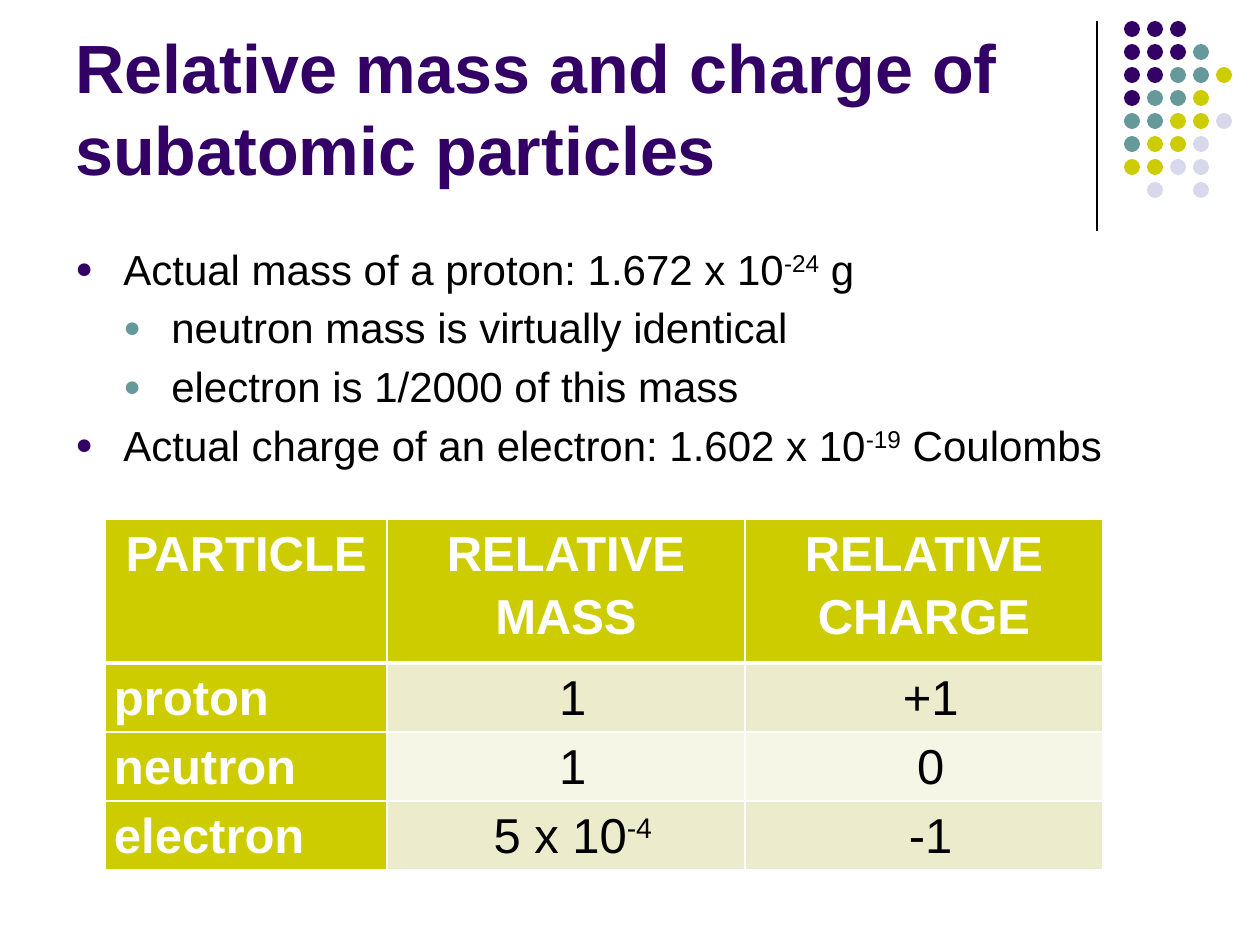
from dataclasses import dataclass

from lxml import etree
from pptx import Presentation
from pptx.dml.color import RGBColor
from pptx.enum.shapes import MSO_CONNECTOR, MSO_SHAPE
from pptx.enum.text import MSO_ANCHOR, PP_ALIGN
from pptx.oxml.ns import qn
from pptx.util import Pt

EMU_PER_PX = 914400 / 126
OVAL = MSO_SHAPE.OVAL
STRAIGHT = MSO_CONNECTOR.STRAIGHT
TOP, BOTTOM = MSO_ANCHOR.TOP, MSO_ANCHOR.BOTTOM
LEFT, CENTER = PP_ALIGN.LEFT, PP_ALIGN.CENTER

COLORS = {
    "purple": "330066", "teal": "669999", "lime": "CCCC00", "lilac": "D8D8EC",
    "black": "000000", "white": "FFFFFF", "band": "ECECCC", "pale": "F6F6E7",
}

DOT_COLORS = {"P": "purple", "T": "teal", "Y": "lime", "L": "lilac"}
DOT_ROWS = ["PPP", "PPPT", "PPTTY", "PTTY", "TTYYL", "TYYL", "YYLL", ".L.L"]
DOT_LEFT, DOT_TOP, DOT_SIZE, DOT_PITCH = 1124, 21, 16, 23

BULLET_INDENT = 48
BULLET_COLORS = ["purple", "teal"]
TABLE_BOX = (105, 519, 998, 351)
COLUMN_WIDTHS = [282, 358, 358]
ROW_HEIGHTS = [144, 69, 69, 69]
CELL_MARGINS = {"margin_left": 9, "margin_right": 9, "margin_top": 0, "margin_bottom": 0}
CELL_PARAGRAPH = {"line_spacing": 1.15, "space_after": Pt(10)}


@dataclass(frozen=True)
class TextStyle:
    size: int
    color: str
    bold: bool = False


@dataclass(frozen=True)
class Bullet:
    text: str
    level: int = 0


TITLE = TextStyle(39, "purple", True)
BODY = TextStyle(24, "black")
HEADING = TextStyle(28, "white", True)
VALUE = TextStyle(28, "black")

# Text between carets is superscript.
BULLETS = [
    Bullet("Actual mass of a proton: 1.672 x 10^-24^ g"),
    Bullet("neutron mass is virtually identical", 1),
    Bullet("electron is 1/2000 of this mass", 1),
    Bullet("Actual charge of an electron: 1.602 x 10^-19^ Coulombs"),
]
TABLE_ROWS = [
    ("PARTICLE", "RELATIVE MASS", "RELATIVE CHARGE"),
    ("proton", " 1", " +1"),
    ("neutron", " 1", " 0"),
    ("electron", " 5 x 10^-4^", " -1"),
]


def px(value: int) -> int:
    return round(value * EMU_PER_PX)


def rgb(name: str) -> RGBColor:
    return RGBColor.from_string(COLORS[name])


def set_all(target, values: dict) -> None:
    for name, value in values.items():
        setattr(target, name, value)


def add_xml(parent, tag: str, **attributes: str):
    return etree.SubElement(parent, qn(tag), attributes)


def add_runs(p, text: str, style: TextStyle) -> None:
    """Add text to a paragraph, raising the parts between carets."""
    for i, part in enumerate(text.split("^")):
        if not part:
            continue
        r = p.add_run()
        r.text = part
        set_all(r.font, {"name": "Arial", "size": Pt(style.size), "bold": style.bold})
        r.font.color.rgb = rgb(style.color)
        if i % 2:
            r.font._element.set("baseline", "30000")


def add_text_frame(slide, box: tuple[int, int, int, int], anchor):
    tf = slide.shapes.add_textbox(*map(px, box)).text_frame
    set_all(tf, {"word_wrap": True, "vertical_anchor": anchor})
    return tf


def add_bullet(p, bullet: Bullet) -> None:
    p.level = bullet.level
    pPr = p._p.get_or_add_pPr()
    pPr.set("marL", str(px(BULLET_INDENT * (bullet.level + 1))))
    pPr.set("indent", str(-px(BULLET_INDENT)))
    add_xml(add_xml(pPr, "a:spcBef"), "a:spcPct", val="20000")
    add_xml(add_xml(pPr, "a:buClr"), "a:srgbClr", val=COLORS[BULLET_COLORS[bullet.level]])
    add_xml(pPr, "a:buSzPct", val="70000")
    add_xml(pPr, "a:buFont", typeface="Arial")
    add_xml(pPr, "a:buChar", char="●")
    add_runs(p, bullet.text, BODY)


def add_divider(slide) -> None:
    line = slide.shapes.add_connector(STRAIGHT, px(1097), px(21), px(1097), px(231))
    line.line.color.rgb = rgb("black")
    line.line.width = Pt(0.75)
    add_xml(line._element.spPr, "a:effectLst")


def add_dots(slide) -> None:
    group = slide.shapes.add_group_shape()
    for row, codes in enumerate(DOT_ROWS):
        for col, code in enumerate(codes):
            if code not in DOT_COLORS:
                continue
            sp = group.shapes.add_shape(
                OVAL, px(DOT_LEFT + col * DOT_PITCH), px(DOT_TOP + row * DOT_PITCH),
                px(DOT_SIZE), px(DOT_SIZE))
            sp.shadow.inherit = False
            sp.fill.solid()
            sp.fill.fore_color.rgb = rgb(DOT_COLORS[code])
            sp.line.fill.background()


def set_borders(cell, row: int) -> None:
    """Draw white borders, heavier between the header and the first data row."""
    heavy = {0: "a:lnB", 1: "a:lnT"}.get(row)
    tcPr = cell._tc.get_or_add_tcPr()
    for i, tag in enumerate(("a:lnL", "a:lnR", "a:lnT", "a:lnB")):
        line = etree.Element(qn(tag), {"w": str(Pt(3 if tag == heavy else 1))})
        add_xml(add_xml(line, "a:solidFill"), "a:srgbClr", val=COLORS["white"])
        tcPr.insert(i, line)


def fill_cell(cell, row: int, col: int, text: str) -> None:
    is_heading = row == 0 or col == 0
    set_all(cell, {name: px(value) for name, value in CELL_MARGINS.items()})
    cell.fill.solid()
    cell.fill.fore_color.rgb = rgb("lime" if is_heading else "band" if row % 2 else "pale")
    set_borders(cell, row)
    p = cell.text_frame.paragraphs[0]
    set_all(p, CELL_PARAGRAPH)
    p.alignment = LEFT if row and col == 0 else CENTER
    add_runs(p, text, HEADING if is_heading else VALUE)


def add_particle_table(slide) -> None:
    table = slide.shapes.add_table(
        len(ROW_HEIGHTS), len(COLUMN_WIDTHS), *map(px, TABLE_BOX)).table
    for column, width in zip(table.columns, COLUMN_WIDTHS):
        column.width = px(width)
    for row, (height, texts) in enumerate(zip(ROW_HEIGHTS, TABLE_ROWS)):
        table.rows[row].height = px(height)
        for col, text in enumerate(texts):
            fill_cell(table.cell(row, col), row, col, text)


def main() -> None:
    prs = Presentation()
    set_all(prs, {"slide_width": px(1260), "slide_height": px(945)})
    slide = prs.slides.add_slide(prs.slide_layouts[6])
    add_divider(slide)
    add_dots(slide)
    title = add_text_frame(slide, (63, 16, 1040, 179), BOTTOM)
    add_runs(title.paragraphs[0], "Relative mass and charge of subatomic particles", TITLE)
    body = add_text_frame(slide, (63, 237, 1134, 267), TOP)
    for i, bullet in enumerate(BULLETS):
        add_bullet(body.add_paragraph() if i else body.paragraphs[0], bullet)
    add_particle_table(slide)
    prs.save("out.pptx")


if __name__ == "__main__":
    main()
